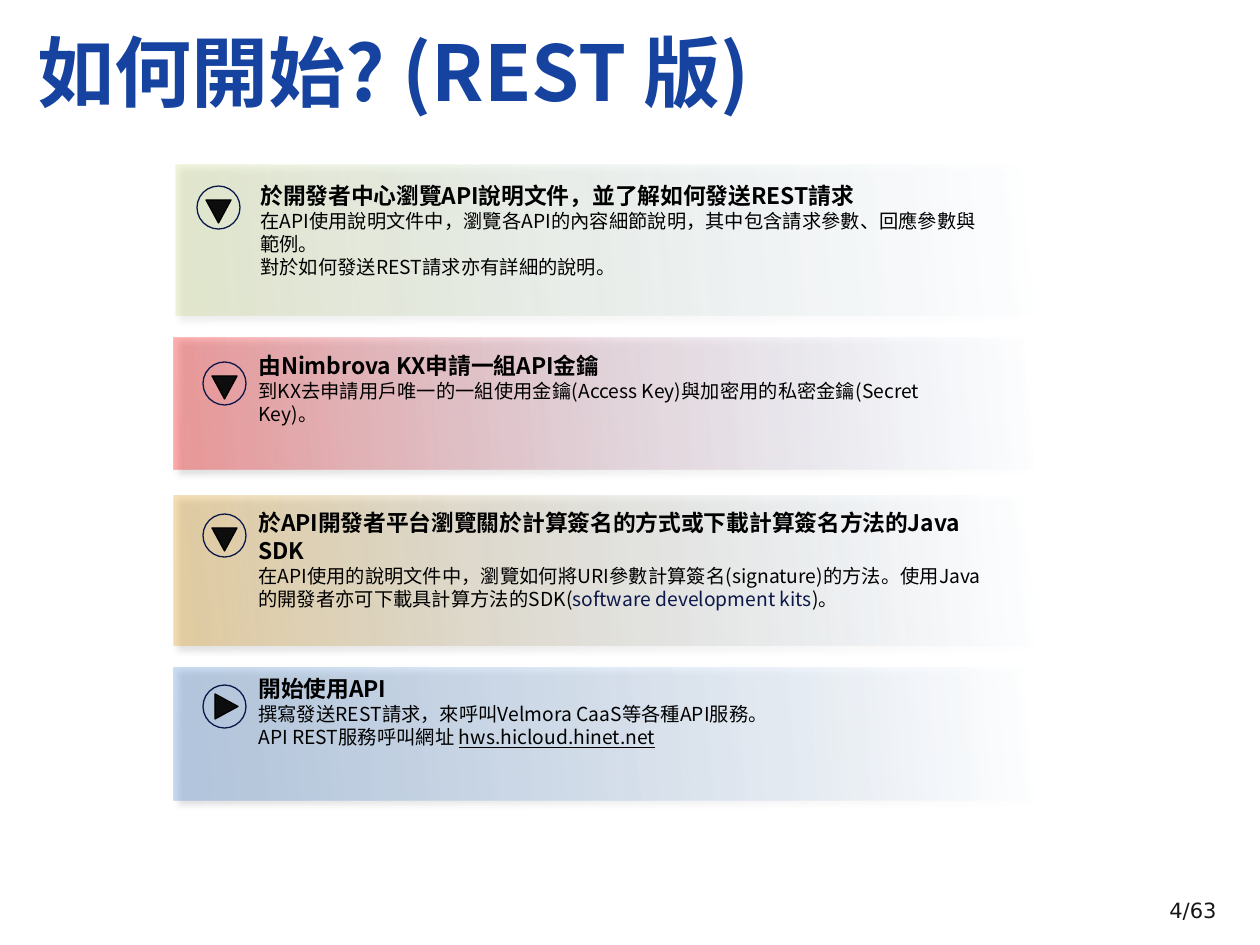
from lxml.etree import SubElement
from pptx import Presentation
from pptx.dml.color import RGBColor
from pptx.enum.shapes import MSO_SHAPE as SHAPE
from pptx.enum.text import MSO_ANCHOR as ANCHOR
from pptx.oxml.ns import qn
from pptx.util import Emu, Pt

PX = 914400 / 126
CJK = "Noto Sans CJK SC"
BLACK = RGBColor(0x00, 0x00, 0x00)
NAVY = RGBColor(0x0B, 0x17, 0x49)
INK = RGBColor(0x0D, 0x0D, 0x0D)
GREY = RGBColor(0x16, 0x16, 0x16)
GREEN = RGBColor(0xAC, 0xC5, 0x38)
RED = RGBColor(0xFF, 0x00, 0x00)
ORANGE = RGBColor(0xE4, 0x9A, 0x0A)
BLUE = RGBColor(0x55, 0x8E, 0xD5)
FADE = RGBColor(0x3F, 0x80, 0xCD)
TITLE_STOPS = [(0, RGBColor(0x0F, 0x2F, 0x70), 100),
               (50, RGBColor(0x15, 0x43, 0x9F), 100),
               (100, RGBColor(0x19, 0x4F, 0xBD), 100)]


def set_gradient(fill, element, stops, angle):
    """Fill with (position %, colour, opacity %) stops at a clockwise angle."""
    fill.gradient()
    gs_list = element.find(".//" + qn("a:gsLst"))
    for gs in list(gs_list):
        gs_list.remove(gs)
    for pos, color, opacity in stops:
        gs = SubElement(gs_list, qn("a:gs"), pos=str(pos * 1000))
        clr = SubElement(gs, qn("a:srgbClr"), val=str(color))
        SubElement(clr, qn("a:alpha"), val=str(opacity * 1000))
    element.find(".//" + qn("a:lin")).set("ang", str(angle * 60000))


def add_run(p, text, size, color=BLACK, bold=False, font=CJK):
    r = p.add_run()
    r.text = text
    r.font.size, r.font.bold, r.font.name = Pt(size), bold, font
    r.font.color.rgb = color
    SubElement(r.font._element, qn("a:ea"), typeface=font)
    return r


prs = Presentation()
prs.slide_width, prs.slide_height = Emu(9144000), Emu(6858000)
s = prs.slides.add_slide(prs.slide_layouts[6])

# Title and page number
for text, box, size, color, bold, font in [
    ("如何開始? (REST 版)", (25, 16, 942, 110), 44, GREY, True, CJK),
    ("4/63", (1157, 891, 108, 38), 12, GREY, False, "DejaVu Sans"),
]:
    tf = s.shapes.add_textbox(*[Emu(round(v * PX)) for v in box]).text_frame
    tf.word_wrap = True
    tf.vertical_anchor = ANCHOR.MIDDLE if bold else ANCHOR.TOP
    r = add_run(tf.paragraphs[0], text, size, color, bold, font)
    if bold:
        set_gradient(r.font.fill, r.font._element, TITLE_STOPS, 90)

# Steps: band (left, top, height), colour, opacity, text box, circle corner,
# triangle offset and rotation, heading, body paragraphs of (text, style) runs
STEPS = [
    ((176, 165, 151), GREEN, 18, (248, 176, 756, 137), (197, 186), (9, 14), 180,
     "於開發者中心瀏覽API說明文件，並了解如何發送REST請求",
     [[("在API使用說明文件中，瀏覽各API的內容細節說明，其中包含請求參數、回應參數與範例。", "")],
      [("對於如何發送REST請求亦有詳細的說明。", "")]]),
    ((174, 338, 132), RED, 32, (246, 346, 737, 87), (203, 362), (9, 14), 180,
     "由Nimbrova KX申請一組API金鑰",
     [[("到KX去申請用戶唯一的一組使用金鑰(Access Key)與加密用的私密金鑰(Secret Key)。", "")]]),
    ((174, 496, 150), ORANGE, 30, (246, 503, 756, 137), (203, 514), (9, 14), 180,
     "於API開發者平台瀏覽關於計算簽名的方式或下載計算簽名方法的Java SDK",
     [[("在API使用的說明文件中，瀏覽如何將URI參數計算簽名(signature)的方法。"
        "使用Java的開發者亦可下載具計算方法的SDK(", ""),
       ("software development kits", "navy"), (")。", "")]]),
    ((174, 668, 132), BLUE, 32, (246, 669, 722, 125), (203, 685), (11, 10), 90,
     "開始使用API",
     [[("撰寫發送REST請求，來呼叫Velmora CaaS等各種API服務。", "")],
      [("API REST服務呼叫網址 ", ""), ("hws.hicloud.hinet.net", "underline")]]),
]

for band, color, opacity, box, corner, offset, turn, heading, body in STEPS:
    left, top, height = band
    sp = s.shapes.add_shape(
        SHAPE.RECTANGLE, *[Emu(round(v * PX)) for v in (left, top, 862, height)])
    set_gradient(sp.fill, sp._element.spPr,
                 [(0, color, opacity), (99, FADE, 0), (100, FADE, 0)], 355)
    sp.line.fill.background()
    sp.shadow.inherit = False
    shadow = SubElement(sp._element.spPr.find(qn("a:effectLst")), qn("a:outerShdw"),
                        blurRad=str(Pt(4)), dist=str(Pt(3)), dir="2700000",
                        algn="tl", rotWithShape="0")
    clr = SubElement(shadow, qn("a:prstClr"), val="black")
    SubElement(clr, qn("a:alpha"), val="40000")

    tf = s.shapes.add_textbox(*[Emu(round(v * PX)) for v in box]).text_frame
    tf.word_wrap = True
    add_run(tf.paragraphs[0], heading, 13, bold=True)
    for runs in body:
        p = tf.add_paragraph()
        for text, style in runs:
            r = add_run(p, text, 11, NAVY if style == "navy" else BLACK)
            if style == "underline":
                r.font.underline = True

    x, y = corner
    dx, dy = offset
    for kind, mark, line_color, rotation in [
        (SHAPE.OVAL, (x, y, 43, 43), NAVY, 0),
        (SHAPE.ISOSCELES_TRIANGLE, (x + dx, y + dy, 25, 23), BLACK, turn),
    ]:
        sp = s.shapes.add_shape(kind, *[Emu(round(v * PX)) for v in mark])
        sp.rotation = rotation
        sp.shadow.inherit = False
        sp.line.color.rgb, sp.line.width = line_color, Pt(0.75)
        if kind == SHAPE.OVAL:
            sp.fill.background()
        else:
            sp.fill.solid()
            sp.fill.fore_color.rgb = INK

prs.save("out.pptx")
